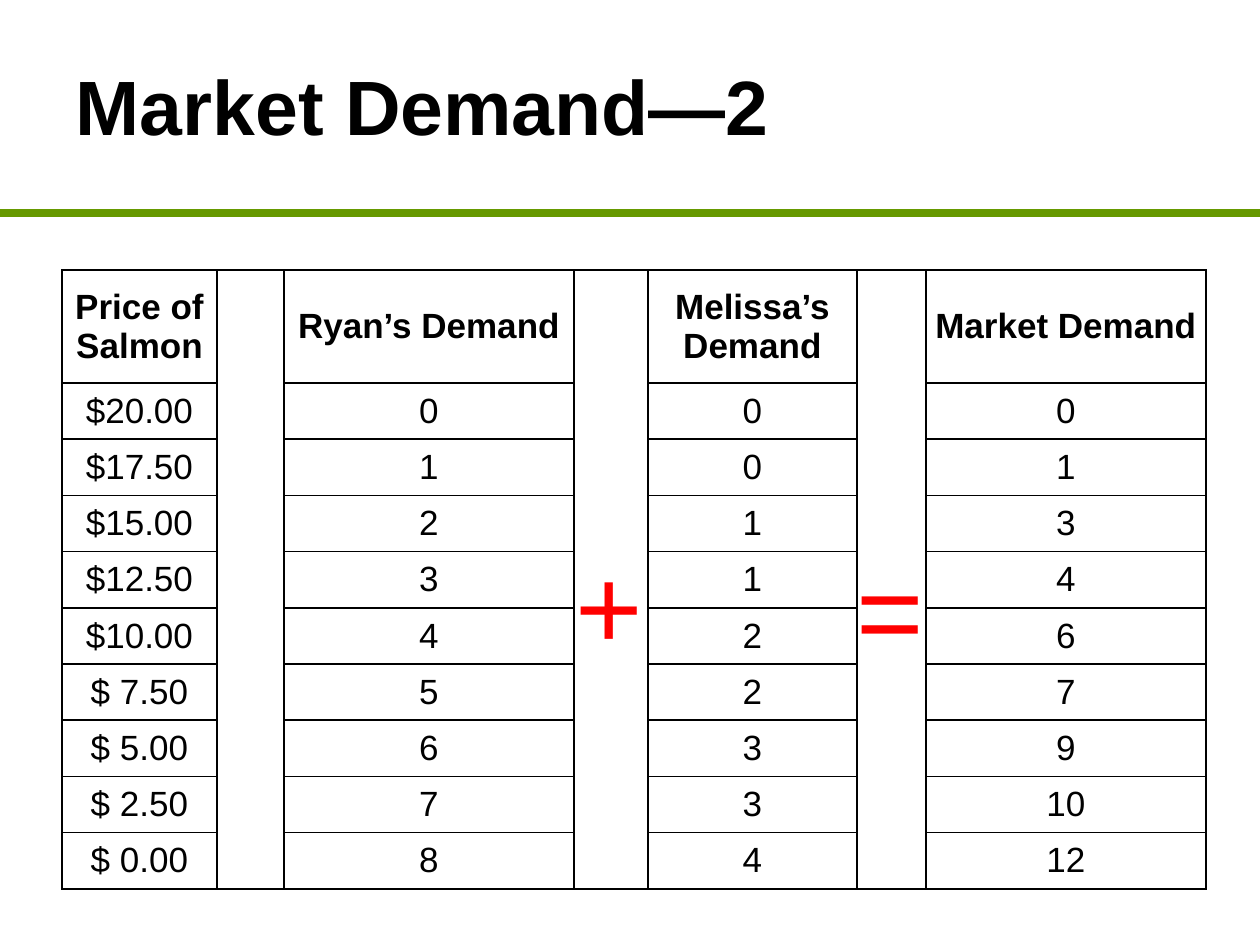
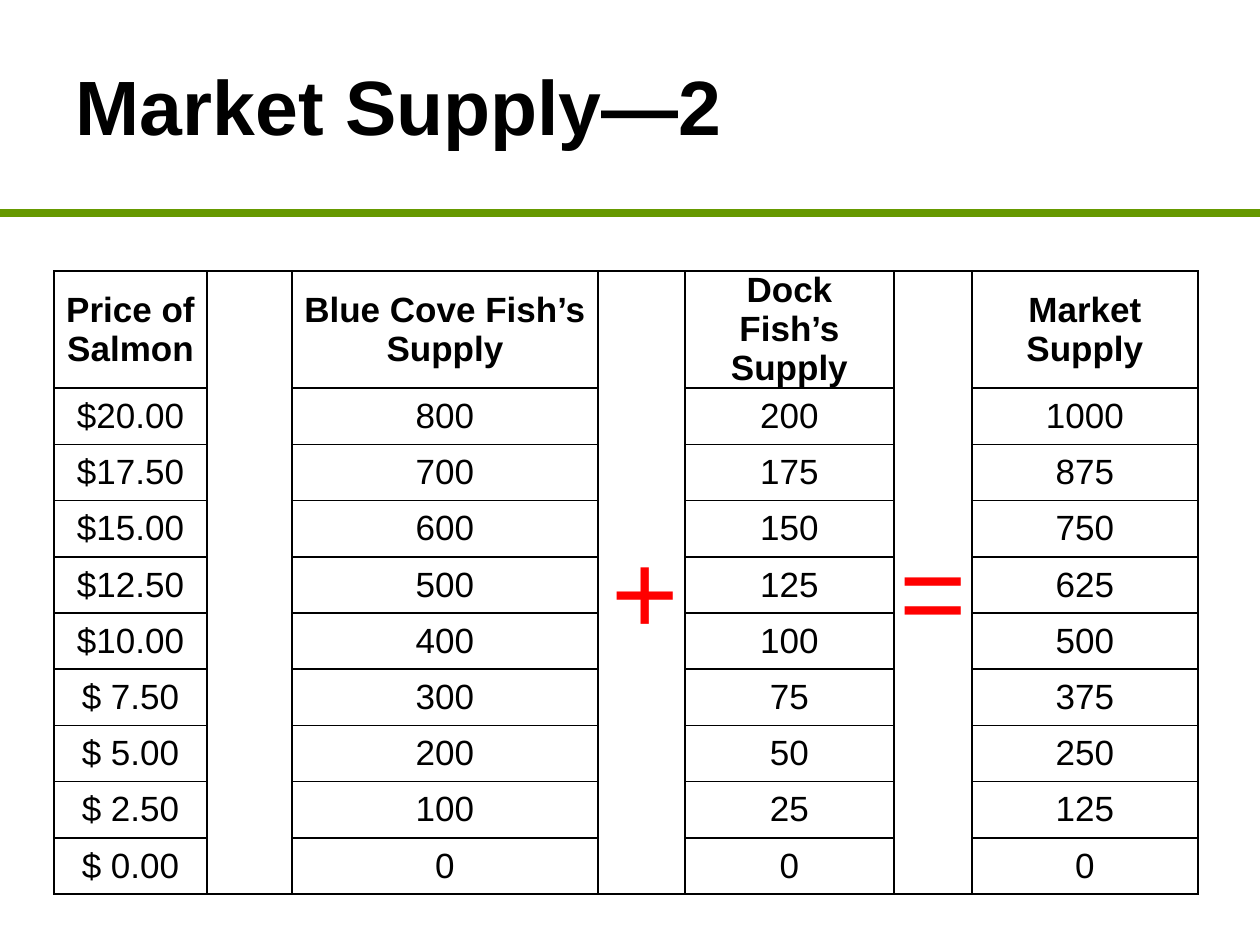
from lxml import etree
from pptx import Presentation
from pptx.dml.color import RGBColor
from pptx.enum.shapes import MSO_CONNECTOR
from pptx.enum.text import MSO_ANCHOR, MSO_AUTO_SIZE as AUTO, PP_ALIGN
from pptx.oxml.ns import qn
from pptx.util import Pt

BLACK = RGBColor(0x00, 0x00, 0x00)
GREEN = RGBColor(0x66, 0x99, 0x00)
RED = RGBColor(0xFF, 0x00, 0x00)

# Text formats
TITLE = dict(name="Arial", size=Pt(44), bold=True)
HEAD = dict(name="Arial", size=Pt(20), bold=True)
BODY = dict(name="Arial", size=Pt(20), bold=False)
SIGN = dict(name="Arial", size=Pt(66), bold=False)


def px(n):
    return round(n * 914400 / 126)


def write(tf, text, fmt, color=BLACK, align=PP_ALIGN.LEFT):
    p = tf.paragraphs[0]
    p.alignment = align
    r = p.add_run()
    r.text = text
    for key, value in fmt.items():
        setattr(r.font, key, value)
    r.font.color.rgb = color


# Table content: the market column is the sum of the two before it
prices = ["$20.00", "$17.50", "$15.00", "$12.50", "$10.00",
          "$ 7.50", "$ 5.00", "$ 2.50", "$ 0.00"]
pages = [
    dict(title="Market Demand—2",
         heads=["Price of Salmon", "Ryan’s Demand", "Melissa’s Demand", "Market Demand"],
         first=[0, 1, 2, 3, 4, 5, 6, 7, 8],
         second=[0, 0, 1, 1, 2, 2, 3, 3, 4],
         left=62, top=270, cols=[155, 67, 290, 74, 209, 69, 280],
         signs=[("+", 563, 528), ("=", 844, 532)]),
    dict(title="Market Supply—2",
         heads=["Price of Salmon", "Blue Cove Fish’s Supply", "Dock Fish’s Supply",
                "Market Supply"],
         first=[800, 700, 600, 500, 400, 300, 200, 100, 0],
         second=[200, 175, 150, 125, 100, 75, 50, 25, 0],
         left=54, top=271, cols=[153, 85, 306, 87, 209, 78, 226],
         signs=[("+", 599, 513), ("=", 887, 513)]),
]
HEAD_H, BODY_H = 113, 506

prs = Presentation()
prs.slide_width, prs.slide_height = px(1260), px(945)

for page in pages:
    s = prs.slides.add_slide(prs.slide_layouts[5])

    # Title
    sp = s.shapes.title
    sp.left, sp.top, sp.width, sp.height = px(63), px(0), px(1134), px(210)
    tf = sp.text_frame
    tf.word_wrap, tf.auto_size = True, AUTO.NONE
    tf.vertical_anchor = MSO_ANCHOR.MIDDLE
    write(tf, page["title"], TITLE)

    # Green rule under the title
    rule = s.shapes.add_connector(MSO_CONNECTOR.STRAIGHT, px(0), px(213), px(1260), px(213))
    rule.line.color.rgb = GREEN
    rule.line.width = Pt(4.5)
    etree.SubElement(rule._element.spPr, qn("a:effectLst"))

    # Table, with narrow empty columns between the filled ones
    rows = [page["heads"]]
    for price, a, b in zip(prices, page["first"], page["second"]):
        rows.append([price, a, b, a + b])
    table = s.shapes.add_table(len(rows), len(page["cols"]), px(page["left"]), px(page["top"]),
                               px(sum(page["cols"])), px(HEAD_H + BODY_H)).table
    table.first_row = table.horz_banding = False
    for col, width in zip(table.columns, page["cols"]):
        col.width = px(width)
    for i, values in enumerate(rows):
        table.rows[i].height = px(BODY_H) // len(prices) if i else px(HEAD_H)
        for j in range(len(page["cols"])):
            cell = table.cell(i, j)
            gap = j % 2 == 1
            cell.margin_left = cell.margin_right = px(9)
            cell.margin_top = cell.margin_bottom = 0
            cell.vertical_anchor = MSO_ANCHOR.MIDDLE
            if not gap:
                write(cell.text_frame, str(values[j // 2]), BODY if i else HEAD,
                      align=PP_ALIGN.CENTER)

            # Borders: gap columns are lined only at their sides and outer ends
            drawn = dict(L=True, R=True, T=not gap or i == 0,
                         B=not gap or i == len(rows) - 1)
            tcPr = cell._tc.get_or_add_tcPr()
            for side, visible in drawn.items():
                ln = etree.SubElement(tcPr, qn(f"a:ln{side}"), w=str(Pt(1)))
                if visible:
                    fill = etree.SubElement(ln, qn("a:solidFill"))
                    etree.SubElement(fill, qn("a:srgbClr"), val=str(BLACK))
                else:
                    etree.SubElement(ln, qn("a:noFill"))
            cell.fill.background()

    # Plus and equals signs over the gap columns
    for sign, x, y in page["signs"]:
        tf = s.shapes.add_textbox(px(x), px(y), px(116), px(152)).text_frame
        tf.word_wrap, tf.auto_size = True, AUTO.SHAPE_TO_FIT_TEXT
        write(tf, sign, SIGN, RED)

prs.save("out.pptx")
